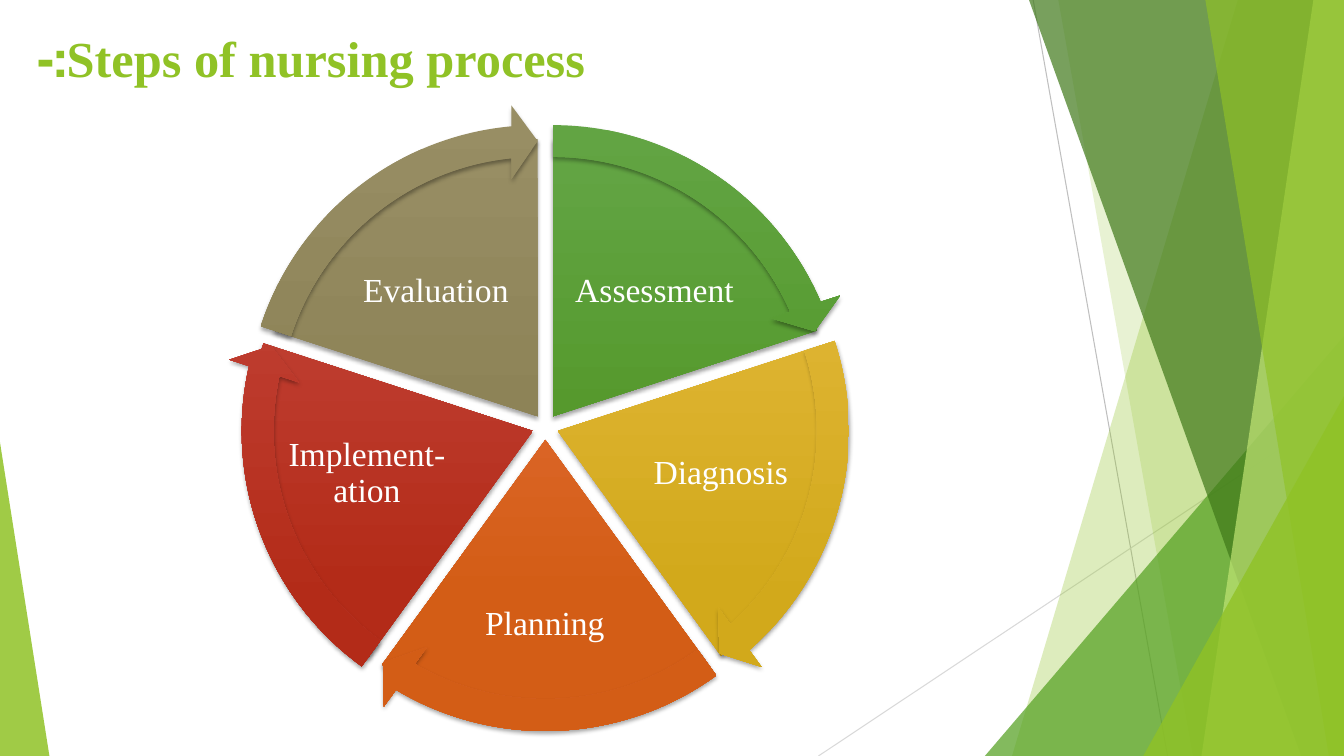
import math
from lxml import etree
from pptx import Presentation, util as u
from pptx.dml.color import RGBColor
from pptx.enum import shapes, text
from pptx.oxml.ns import qn

COLORS = {
    "lime": "90C226", "green": "54A021", "forest": "3F7819", "pale": "C0E474",
    "white": "FFFFFF", "black": "000000", "silver": "BFBFBF", "mist": "D9D9D9",
}
COLUMNS, ROWS = 160, 90
HUB, GAP = (64.92, 50.82), 1.56
WEDGE_SIZE, ARROW_SIZE = 66.12, 74.28
START, STEP, SWEEP, FULL_TURN = 162, 43.2, 39.93, 216
STEPS = [
    ("Assessment", "63A545", "4D921E", (67.3, 27.6, 21.24, 14.16), WEDGE_SIZE),
    ("Diagnosis", "E7BC43", "D2A91B", (75.96, 48.48, 19.68, 15.72), WEDGE_SIZE),
    ("Planning", "E87242", "D35D16", (55.44, 65.76, 18.84, 17.28), WEDGE_SIZE),
    ("Implement-ation", "C74B42", "B32B18", (33.6, 48.48, 20.16, 15.72), 67.56),
    ("Evaluation", "988E64", "857B4E", (41.28, 27.6, 21.24, 14.16), WEDGE_SIZE),
]


class Slide:
    font = "Times New Roman"

    def __init__(self, deck):
        self.cell = deck.slide_width / COLUMNS
        self.page = deck.slides.add_slide(deck.slide_layouts[5])
        self.shapes = self.page.shapes

    def cells(self, *lengths):
        return [u.Emu(round(length * self.cell)) for length in lengths]

    def add_words(self, frame, words, size, color, align, bold=False):
        frame.word_wrap = True
        frame.auto_size = text.MSO_AUTO_SIZE.NONE
        para = frame.paragraphs[0]
        para.alignment = align
        span = para.add_run()
        span.text = words
        span.font.name, span.font.size, span.font.bold = self.font, u.Pt(size), bold
        span.font.color.rgb = RGBColor.from_string(COLORS[color])
        return para

    def title(self, words, place):
        box = self.shapes.title
        box.left, box.top, box.width, box.height = self.cells(*place)
        box.text_frame.vertical_anchor = text.MSO_ANCHOR.TOP
        para = self.add_words(box.text_frame, words, 36, "lime", text.PP_ALIGN.LEFT, True)
        para._p.get_or_add_pPr().set("rtl", "1")

    def label(self, words, place):
        frame = self.shapes.add_textbox(*self.cells(*place)).text_frame
        frame.margin_left = frame.margin_right = u.Inches(0.03)
        frame.margin_top = frame.margin_bottom = u.Inches(0.03)
        frame.vertical_anchor = text.MSO_ANCHOR.MIDDLE
        para = self.add_words(frame, words, 24, "white", text.PP_ALIGN.CENTER)
        para.line_spacing = 0.9

    def line(self, ends, color):
        line = self.shapes.add_connector(shapes.MSO_CONNECTOR.STRAIGHT, *self.cells(*ends))
        line.line.color.rgb = RGBColor.from_string(COLORS[color])
        line.line.width = u.Pt(0.75)
        etree.SubElement(line._element.spPr, qn("a:effectLst"))

    def tint(self, shape, color, opacity):
        shape.shadow.inherit = False
        shape.line.fill.background()
        shape.fill.solid()
        shape.fill.fore_color.rgb = RGBColor.from_string(COLORS[color])
        tone = shape._element.spPr.find(qn("a:solidFill"))[0]
        etree.SubElement(tone, qn("a:alpha"), val=str(opacity * 1000))

    def band(self, top, bottom, color, opacity):
        corners = [(COLUMNS, 0), (COLUMNS, ROWS), (bottom, ROWS)]
        outline = self.shapes.build_freeform(*self.cells(top, 0))
        outline.add_line_segments([self.cells(*corner) for corner in corners])
        self.tint(outline.convert_to_shape(), color, opacity)

    def triangle(self, place, apex, color, opacity):
        shape = self.shapes.add_shape(
            shapes.MSO_SHAPE.ISOSCELES_TRIANGLE, *self.cells(*place))
        shape.adjustments[0] = apex
        self.tint(shape, color, opacity)

    def glossy(self, kind, center, width, height, adjustments, tones):
        place = (center[0] - width / 2, center[1] - height / 2, width, height)
        shape = self.shapes.add_shape(kind, *self.cells(*place))
        for index, value in enumerate(adjustments):
            shape.adjustments[index] = value
        shape.line.fill.background()
        shape.fill.gradient()
        shape.fill.gradient_angle = 270
        for stop, tone, position in zip(shape.fill.gradient_stops, tones, (0, 0.78)):
            stop.color.rgb = RGBColor.from_string(tone)
            stop.position = position
        shape.shadow.inherit = False
        effects = shape._element.spPr.find(qn("a:effectLst"))
        shadow = etree.SubElement(
            effects, qn("a:outerShdw"), blurRad=str(u.Pt(3)), dist=str(u.Pt(2)),
            dir="5400000", rotWithShape="0")
        tone = etree.SubElement(shadow, qn("a:srgbClr"), val=COLORS["black"])
        etree.SubElement(tone, qn("a:alpha"), val="35000")


def add_backdrop(slide):
    slide.line((123, 0, 139, ROWS), "silver")
    slide.line((COLUMNS, 48.36, 97.44, ROWS), "mist")
    slide.band(147.36, 120.48, "lime", 30)
    slide.band(126, 142, "lime", 20)
    slide.triangle((117.25, 40, 42.75, 50), 1, "green", 72)
    slide.band(122.5, 154.9, "forest", 70)
    slide.band(156.36, 143.04, "pale", 70)
    slide.band(143.5, 158.2, "lime", 65)
    slide.triangle((136.1, 47.16, 23.9, 42.84), 1, "lime", 80)
    slide.triangle((0, 52.68, 5.88, 37.32), 0, "lime", 85)


def add_cycle(slide):
    arrows = []
    for index, (name, light, dark, place, width) in enumerate(STEPS):
        middle = math.radians(72 * index - 54)
        center = (HUB[0] + GAP * math.cos(middle), HUB[1] + GAP * math.sin(middle))
        start = (START + STEP * index) % FULL_TURN
        end = (start + STEP) % FULL_TURN
        tip = (start + SWEEP) % FULL_TURN
        slide.glossy(shapes.MSO_SHAPE.PIE, center, width, WEDGE_SIZE,
                     (start, end), (light, dark))
        slide.label(name, place)
        arrows.append((center, (0.051, 3.275, tip, start, 0.059), (light, dark)))
    for center, adjustments, tones in arrows:
        slide.glossy(shapes.MSO_SHAPE.CIRCULAR_ARROW, center, ARROW_SIZE, ARROW_SIZE,
                     adjustments, tones)


def main():
    deck = Presentation()
    deck.slide_width, deck.slide_height = u.Inches(13.333), u.Inches(7.5)
    slide = Slide(deck)
    add_backdrop(slide)
    slide.title("Steps of nursing process:-", (3.24, 2.64, 112.8, 17.28))
    add_cycle(slide)
    deck.save("out.pptx")


if __name__ == "__main__":
    main()
